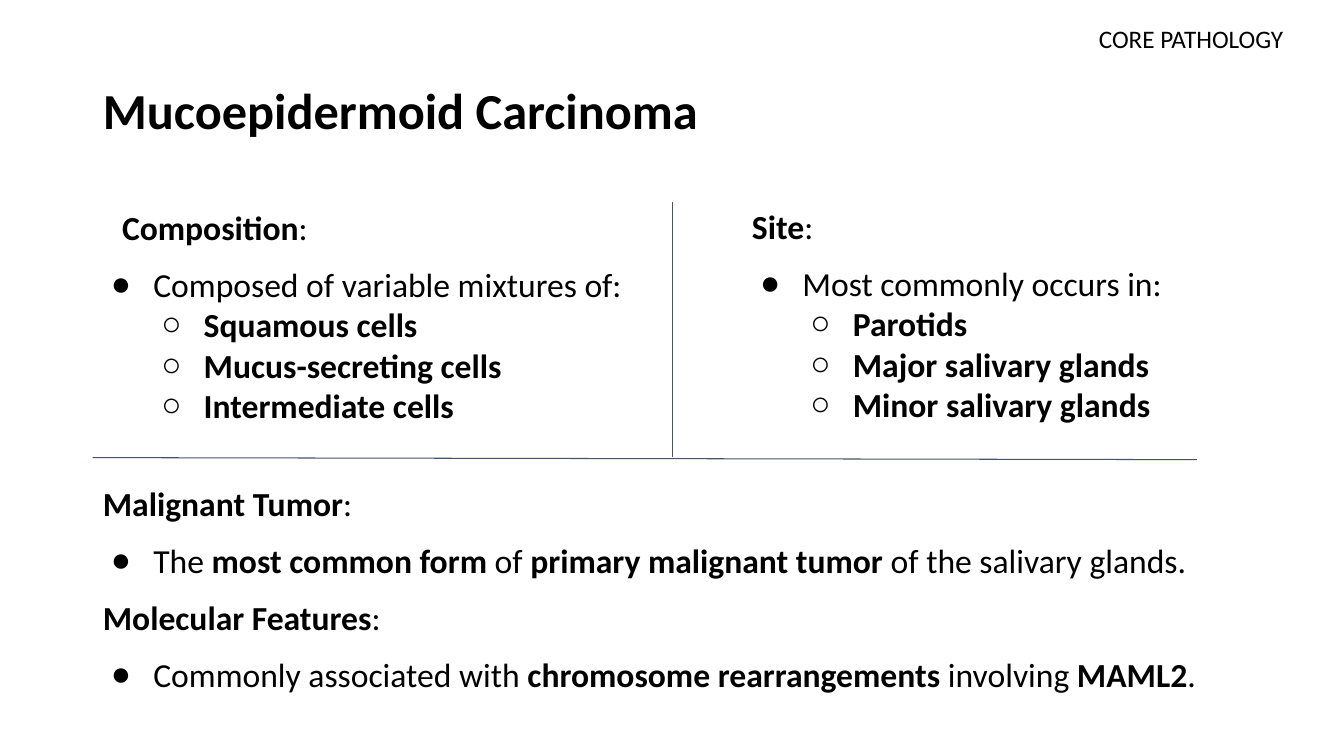
from lxml import etree
from pptx import Presentation
from pptx.dml.color import RGBColor
from pptx.enum.shapes import MSO_CONNECTOR
from pptx.enum.text import MSO_ANCHOR, MSO_AUTO_SIZE, PP_ALIGN
from pptx.oxml.ns import qn
from pptx.util import Inches, Pt

STRAIGHT = MSO_CONNECTOR.STRAIGHT
MIDDLE, TOP = MSO_ANCHOR.MIDDLE, MSO_ANCHOR.TOP
NO_AUTOFIT = MSO_AUTO_SIZE.NONE
LEFT = PP_ALIGN.LEFT

FONT = "Calibri"
BLACK = "000000"
RULE_COLOR = "44546A"

# Paragraph kinds: level, left margin, first-line indent, space before, bullet
STYLES = {
    "plain": (0, 0, 0, 0, None),
    "inset": (0, 0.25, -0.06, 10, None),
    "spaced": (0, 0, 0, 12, None),
    "section": (0, 0, 0, 41.3, None),
    "bullet": (0, 0.5, -0.42, 12, "●"),
    "sub": (1, 1, -0.42, 0, "○"),
}

# Text between ** marks is bold
BODY = [
    ("inset", "**Composition**:"),
    ("bullet", "Composed of variable mixtures of:"),
    ("sub", "**Squamous cells**"),
    ("sub", "**Mucus-secreting cells**"),
    ("sub", "**Intermediate cells**"),
    ("section", "**Malignant Tumor**:"),
    ("bullet", "The **most common form** of **primary malignant tumor** "
               "of the salivary glands."),
    ("spaced", "**Molecular Features**:"),
    ("bullet", "Commonly associated with **chromosome rearrangements** "
               "involving **MAML2**."),
]
SITE = [
    ("plain", "**Site**:"),
    ("bullet", "Most commonly occurs in:"),
    ("sub", "**Parotids**"),
    ("sub", "**Major salivary glands**"),
    ("sub", "**Minor salivary glands**"),
]


def color(hex_string):
    return RGBColor.from_string(hex_string)


def set_bullet(paragraph, character):
    properties = paragraph._p.get_or_add_pPr()
    if character is None:
        etree.SubElement(properties, qn("a:buNone"))
        return
    bullet_color = etree.SubElement(properties, qn("a:buClr"))
    etree.SubElement(bullet_color, qn("a:srgbClr"), val=BLACK)
    etree.SubElement(properties, qn("a:buFont"), typeface="Arial")
    etree.SubElement(properties, qn("a:buChar"), char=character)


def format_paragraph(paragraph, style, size, line_spacing):
    level, margin, indent, space_before, bullet = STYLES[style]
    paragraph.level = level
    paragraph.alignment = LEFT
    paragraph.line_spacing = line_spacing
    paragraph.space_before = Pt(space_before)
    paragraph.space_after = Pt(0)
    properties = paragraph._p.get_or_add_pPr()
    properties.set("marL", str(Inches(margin)))
    properties.set("indent", str(Inches(indent)))
    set_bullet(paragraph, bullet)
    paragraph.font.name = FONT
    paragraph.font.size = Pt(size)
    paragraph.font.color.rgb = color(BLACK)


def add_runs(paragraph, text):
    for index, part in enumerate(text.split("**")):
        if part:
            run = paragraph.add_run()
            run.text = part
            run.font.bold = index % 2 == 1


def fill_text(shape, box, items, size, anchor=TOP, inset=0.05, line_spacing=1.0):
    shape.left, shape.top, shape.width, shape.height = map(Inches, box)
    frame = shape.text_frame
    frame.word_wrap = True
    frame.auto_size = NO_AUTOFIT
    frame.vertical_anchor = anchor
    frame.margin_left = frame.margin_right = Inches(0.1)
    frame.margin_top = frame.margin_bottom = Inches(inset)
    for index, (style, text) in enumerate(items):
        paragraph = frame.add_paragraph() if index else frame.paragraphs[0]
        format_paragraph(paragraph, style, size, line_spacing)
        add_runs(paragraph, text)


def add_text(slide, box, items, size, **options):
    shape = slide.shapes.add_textbox(*map(Inches, box))
    fill_text(shape, box, items, size, **options)


def add_rule(slide, *ends):
    rule = slide.shapes.add_connector(STRAIGHT, *map(Inches, ends))
    rule.line.color.rgb = color(RULE_COLOR)
    rule.line.width = Pt(0.75)
    etree.SubElement(rule._element.spPr, qn("a:effectLst"))


def main():
    presentation = Presentation()
    presentation.slide_width = Inches(13.33)
    presentation.slide_height = Inches(7.5)
    slide = presentation.slides.add_slide(presentation.slide_layouts[1])

    # Title and main list
    fill_text(slide.shapes.title, (0.92, 0.4, 11.5, 1.45),
              [("plain", "**Mucoepidermoid Carcinoma**")], 36,
              anchor=MIDDLE, line_spacing=0.9)
    fill_text(slide.placeholders[1], (0.92, 2, 11.5, 4.76), BODY, 24)

    # Corner label and right column
    add_text(slide, (10.8, 0.18, 2.4, 0.4), [("plain", "CORE PATHOLOGY")], 18)
    add_text(slide, (7.36, 1.94, 5.38, 2.32), SITE, 24, inset=0.1)

    # Dividers
    add_rule(slide, 6.67, 2, 6.67, 4.53)
    add_rule(slide, 0.92, 4.54, 11.87, 4.56)

    presentation.save("out.pptx")


if __name__ == "__main__":
    main()
